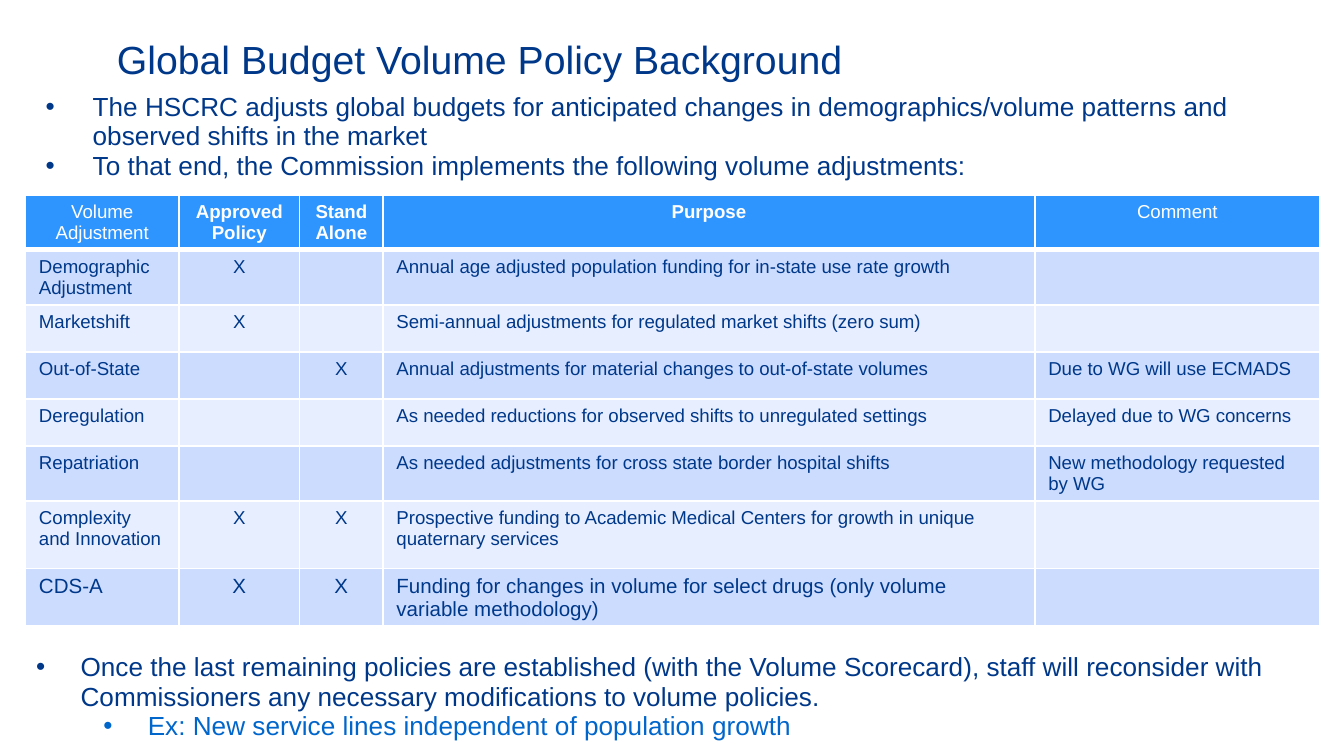
from lxml import etree
from pptx import Presentation
from pptx import util as u
from pptx.dml.color import RGBColor
from pptx.enum import text
from pptx.oxml.ns import qn

# Content
TITLE = "Global Budget Volume Policy Background"
INTRO = [
    (0, "The HSCRC adjusts global budgets for anticipated changes in "
        "demographics/volume patterns and observed shifts in the market"),
    (0, "To that end, the Commission implements the following volume adjustments:"),
]
CLOSING = [
    (0, "Once the last remaining policies are established (with the Volume Scorecard), "
        "staff will reconsider with Commissioners any necessary modifications to volume policies."),
    (1, "Ex: New service lines independent of population growth"),
]
HEADERS = [("Volume Adjustment", False), ("Approved Policy", True),
           ("Stand Alone", True), ("Purpose", True), ("Comment", False)]
ROWS = [
    ("Demographic Adjustment", "X", "",
     "Annual age adjusted population funding for in-state use rate growth", ""),
    ("Marketshift", "X", "",
     "Semi-annual adjustments for regulated market shifts (zero sum)", ""),
    ("Out-of-State", "", "X",
     "Annual adjustments for material changes to out-of-state volumes",
     "Due to WG will use ECMADS"),
    ("Deregulation", "", "",
     "As needed reductions for observed shifts to unregulated settings",
     "Delayed due to WG concerns"),
    ("Repatriation", "", "",
     "As needed adjustments for cross state border hospital shifts",
     "New methodology requested by WG"),
    ("Complexity and Innovation", "X", "X",
     "Prospective funding to Academic Medical Centers for growth in unique "
     "quaternary services", ""),
    ("CDS-A", "X", "X",
     "Funding for changes in volume for select drugs (only volume variable methodology)", ""),
]
COL_WIDTHS = [1.14, 0.9, 0.62, 4.85, 2.12]
ROW_HEIGHTS = [0.41, 0.41, 0.35, 0.35, 0.35, 0.41, 0.5, 0.43]
MARK_COLS = (1, 2)

THEME = {
    "font": "Arial", "navy": "003889", "blue": "0066CC", "white": "FFFFFF",
    "header": "2E95FF", "bands": ("CCDCFF", "E7EEFF"),
    "title": 21, "body": 14, "cell": 10, "last": 11,
}


def add_run(p, words, size, color, bold=False):
    r = p.add_run()
    r.text = words
    r.font.name = THEME["font"]
    r.font.size = u.Pt(size)
    r.font.bold = bold
    r.font.color.rgb = RGBColor.from_string(color)


def add_frame(s, left, top, width, height):
    tf = s.shapes.add_textbox(*map(u.Inches, (left, top, width, height))).text_frame
    tf.word_wrap = True
    tf.margin_left = tf.margin_right = u.Inches(0.07)
    tf.margin_top = tf.margin_bottom = u.Inches(0.04)
    return tf


def add_bullets(s, box, items, hang):
    tf = add_frame(s, *box)
    for i, (level, words) in enumerate(items):
        p = tf.paragraphs[0] if i == 0 else tf.add_paragraph()
        color = THEME["blue"] if level else THEME["navy"]
        p.level = level
        p.line_spacing = 0.94
        pPr = p._p.get_or_add_pPr()
        pPr.set("marL", str(u.Inches(0.5 * (level + 1))))
        pPr.set("indent", str(u.Inches(-hang)))
        bu_clr = etree.SubElement(pPr, qn("a:buClr"))
        etree.SubElement(bu_clr, qn("a:srgbClr"), val=color)
        etree.SubElement(pPr, qn("a:buFont"), typeface=THEME["font"])
        etree.SubElement(pPr, qn("a:buChar"), char="•")
        add_run(p, words, THEME["body"], color)


def set_borders(cell, widths):
    tcPr = cell._tc.get_or_add_tcPr()
    for i, (side, width) in enumerate(widths.items()):
        ln = etree.Element(qn("a:ln" + side), w=str(u.Pt(width)))
        fill = etree.SubElement(ln, qn("a:solidFill"))
        etree.SubElement(fill, qn("a:srgbClr"), val=THEME["white"])
        tcPr.insert(i, ln)


def fill_cell(cell, words, size, color, fill, centered, bold=False):
    cell.fill.solid()
    cell.fill.fore_color.rgb = RGBColor.from_string(fill)
    cell.margin_left = cell.margin_right = u.Inches(0.1)
    cell.margin_top = u.Inches(0.05)
    cell.margin_bottom = u.Inches(0.01)  # lets two lines fit the row height
    p = cell.text_frame.paragraphs[0]
    if centered:
        p.alignment = text.PP_ALIGN.CENTER
    if words:
        add_run(p, words, size, color, bold)
    else:  # keeps an empty cell from stretching its row
        etree.SubElement(p._p, qn("a:endParaRPr"), sz=str(size * 100))


def add_volume_table(s, left, top):
    box = (left, top, sum(COL_WIDTHS), sum(ROW_HEIGHTS))
    table = s.shapes.add_table(len(ROW_HEIGHTS), len(COL_WIDTHS),
                               *map(u.Inches, box)).table
    for col, width in zip(table.columns, COL_WIDTHS):
        col.width = u.Inches(width)
    for row, height in zip(table.rows, ROW_HEIGHTS):
        row.height = u.Inches(height)

    # Header row
    for c, (words, bold) in enumerate(HEADERS):
        cell = table.cell(0, c)
        fill_cell(cell, words, THEME["cell"], THEME["white"], THEME["header"], True, bold)
        set_borders(cell, {"L": 1, "R": 1, "T": 1, "B": 3})

    # Banded body rows
    for n, row in enumerate(ROWS, start=1):
        size = THEME["last"] if n == len(ROWS) else THEME["cell"]
        for c, words in enumerate(row):
            cell = table.cell(n, c)
            fill_cell(cell, words, size, THEME["navy"],
                      THEME["bands"][(n - 1) % 2], c in MARK_COLS)
            set_borders(cell, {"L": 1, "R": 1, "T": 3 if n == 1 else 1, "B": 1})


def main():
    prs = Presentation()
    prs.slide_width = u.Inches(10)
    prs.slide_height = u.Inches(10 * 9 / 16)
    s = prs.slides.add_slide(prs.slide_layouts[6])

    # Title
    tf = add_frame(s, 0.8, 0.22, 8.62, 0.72)
    add_run(tf.paragraphs[0], TITLE, THEME["title"], THEME["navy"])

    # Introduction, table and closing points
    add_bullets(s, (0.12, 0.65, 9.77, 4.12), INTRO, 0.35)
    add_volume_table(s, 0.19, 1.45)
    add_bullets(s, (0.03, 4.82, 9.77, 0.86), CLOSING, 0.33)

    prs.save("out.pptx")


if __name__ == "__main__":
    main()
